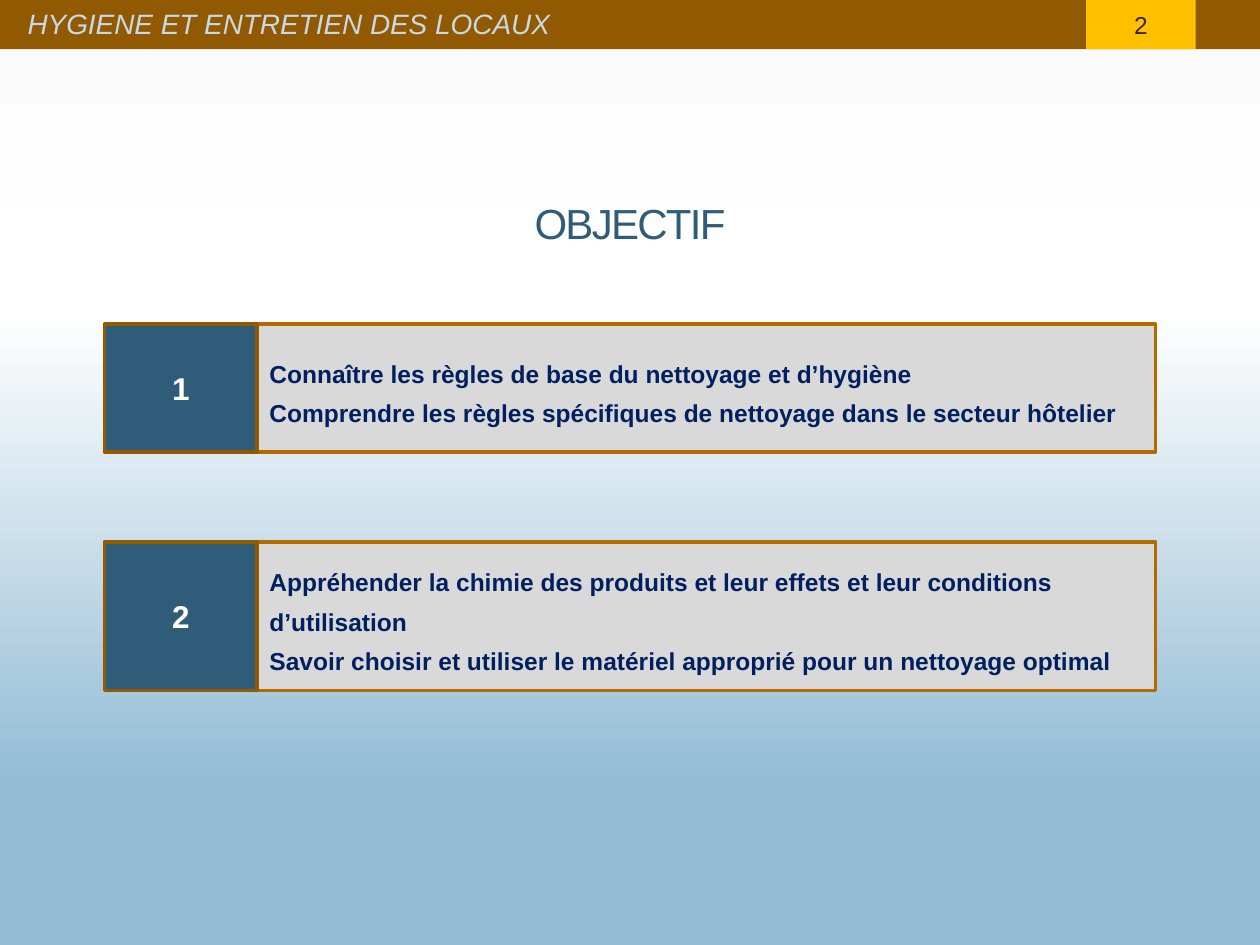
from lxml import etree
from pptx import Presentation
from pptx.dml.color import RGBColor
from pptx.enum.shapes import MSO_SHAPE
from pptx.enum.text import MSO_ANCHOR, PP_ALIGN
from pptx.oxml.ns import qn
from pptx.util import Inches, Pt

RECTANGLE = MSO_SHAPE.RECTANGLE
LEFT, CENTER = PP_ALIGN.LEFT, PP_ALIGN.CENTER
MIDDLE, BOTTOM = MSO_ANCHOR.MIDDLE, MSO_ANCHOR.BOTTOM

WHITE = RGBColor(0xFF, 0xFF, 0xFF)
BROWN = RGBColor(0x92, 0x5A, 0x00)
OCHRE = RGBColor(0xB3, 0x6B, 0x00)
AMBER = RGBColor(0xFF, 0xC0, 0x00)
GREY = RGBColor(0xD9, 0xD9, 0xD9)
TEAL = RGBColor(0x2F, 0x5D, 0x79)
NAVY = RGBColor(0x00, 0x20, 0x60)
PALE_BLUE = RGBColor(0xC9, 0xD8, 0xE5)
DARK_BROWN = RGBColor(0x3C, 0x23, 0x1F)
SKY = RGBColor(0x93, 0xBC, 0xD5)
MIST = RGBColor(0xFA, 0xFA, 0xFA)

HEADER = "HYGIENE ET ENTRETIEN DES LOCAUX"
PAGE_NUMBER = "2"
TITLE = "OBJECTIF"
OBJECTIVES = [
    ("1", 2.57, 1.02, [
        "Connaître les règles de base du nettoyage et d’hygiène",
        "Comprendre les règles spécifiques de nettoyage dans le secteur hôtelier",
    ]),
    ("2", 4.3, 1.18, [
        "Appréhender la chimie des produits et leur effets et leur conditions d’utilisation",
        "Savoir choisir et utiliser le matériel approprié pour un nettoyage optimal",
    ]),
]
BACKGROUND_STOPS = [(0, MIST), (33, WHITE), (83, SKY), (100, SKY)]

WIDTH, HEIGHT = 10, 7.5
BAR_HEIGHT = 0.39
MARGIN = 0.83
NUMBER_WIDTH = 1.21
TEXT_LEFT = MARGIN + NUMBER_WIDTH
TEXT_WIDTH = WIDTH - MARGIN - TEXT_LEFT
TITLE_WIDTH = 3.46


def paint_background(page):
    fill = page.background.fill
    fill.gradient()
    fill.gradient_angle = 270
    stops = page.element.find(".//" + qn("a:gsLst"))
    for stop in list(stops):
        stops.remove(stop)
    for percent, color in BACKGROUND_STOPS:
        stop = etree.SubElement(stops, qn("a:gs"), pos=str(percent * 1000))
        etree.SubElement(stop, qn("a:srgbClr"), val=str(color))


def add_block(page, area, fill, line=None):
    block = page.shapes.add_shape(RECTANGLE, *map(Inches, area))
    block.shadow.inherit = False
    block.fill.solid()
    block.fill.fore_color.rgb = fill
    if line is None:
        block.line.fill.background()
    else:
        block.line.color.rgb = line
        block.line.width = Pt(2.08)
    return block


def write(box, lines, size, color, align=LEFT, anchor=MIDDLE,
          bold=False, italic=False, line_spacing=None, tracking=None):
    frame = box.text_frame
    frame.word_wrap = True
    frame.vertical_anchor = anchor
    for index, line in enumerate(lines):
        para = frame.add_paragraph() if index else frame.paragraphs[0]
        para.alignment = align
        para.line_spacing = line_spacing
        span = para.add_run()
        span.text = line
        span.font.name = "Arial"
        span.font.size = Pt(size)
        span.font.bold = bold
        span.font.italic = italic
        span.font.color.rgb = color
        if tracking is not None:
            span.font._element.set("spc", str(tracking * 100))


def add_text(page, area, lines, size, color, **style):
    box = page.shapes.add_textbox(*map(Inches, area))
    write(box, lines, size, color, **style)


def add_objective(page, number, top, height, lines):
    body = add_block(page, (TEXT_LEFT, top, TEXT_WIDTH, height), GREY, OCHRE)
    write(body, lines, 14, NAVY, bold=True, line_spacing=1.35)
    badge = add_block(page, (MARGIN, top, NUMBER_WIDTH, height), TEAL, BROWN)
    write(badge, [number], 18, WHITE, align=CENTER, bold=True)


def main():
    deck = Presentation()
    deck.slide_width, deck.slide_height = Inches(WIDTH), Inches(HEIGHT)
    page = deck.slides.add_slide(deck.slide_layouts[6])
    paint_background(page)

    add_block(page, (0, 0.16, WIDTH, 0.25), WHITE)
    add_block(page, (0, 0, WIDTH, BAR_HEIGHT), BROWN)
    add_text(page, (0.12, 0.01, 8.19, 0.35), [HEADER], 16, PALE_BLUE, italic=True)
    page_tab = add_block(page, (8.62, 0, 0.87, BAR_HEIGHT), AMBER)
    write(page_tab, [PAGE_NUMBER], 14, DARK_BROWN, align=CENTER)

    title_area = ((WIDTH - TITLE_WIDTH) / 2, 1.55, TITLE_WIDTH, 0.47)
    add_text(page, title_area, [TITLE], 24, TEAL,
             align=CENTER, anchor=BOTTOM, tracking=-1)
    for objective in OBJECTIVES:
        add_objective(page, *objective)

    deck.save("out.pptx")


if __name__ == "__main__":
    main()
